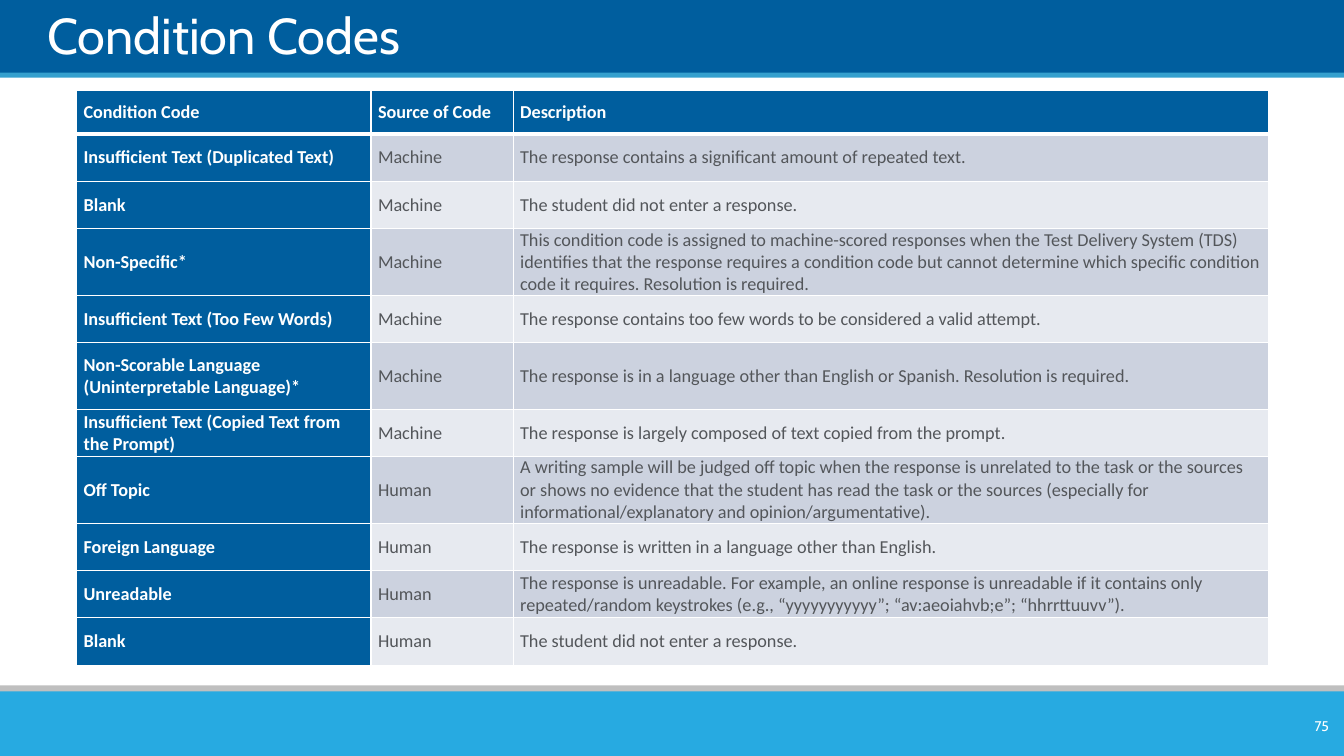
from dataclasses import dataclass

from lxml.etree import SubElement
from pptx import Presentation
from pptx.dml.color import RGBColor
from pptx.enum.shapes import MSO_SHAPE
from pptx.enum.text import MSO_ANCHOR, MSO_AUTO_SIZE, PP_ALIGN
from pptx.oxml import parse_xml
from pptx.oxml.ns import nsdecls, qn
from pptx.util import Inches, Pt


@dataclass(frozen=True)
class Theme:
    navy: str = "005E9E"
    blue: str = "35A0CE"
    sky: str = "27AAE1"
    gray: str = "BFBFBF"
    white: str = "FFFFFF"
    ink: str = "53565A"
    row_dark: str = "CCD2DF"
    row_light: str = "E7EAF0"
    heading_font: str = "Cabin"
    body_font: str = "Calibri"
    title_size: int = 36
    table_size: int = 13
    number_size: int = 10


THEME = Theme()
SLIDE_WIDTH = 13.33

BANDS = [
    (-0.01, 0.75, THEME.navy),
    (0.72, 0.05, THEME.blue),
    (6.8, 0.14, THEME.gray),
    (6.86, 0.64, THEME.sky),
]

COLUMN_WIDTHS = [2.92, 1.41, 7.49]
HEADER_HEIGHT, ROW_HEIGHT, TALL_HEIGHT = 0.43, 0.47, 0.66
TALL_ROWS = {3, 5, 7}

HEADER = ("Condition Code", "Source of Code", "Description")
CONDITIONS = [
    ("Insufficient Text (Duplicated Text)", "Machine",
     "The response contains a significant amount of repeated text."),
    ("Blank", "Machine", "The student did not enter a response."),
    ("Non-Specific*", "Machine",
     "This condition code is assigned to machine-scored responses when the Test "
     "Delivery System (TDS) identifies that the response requires a condition code "
     "but cannot determine which specific condition code it requires. "
     "Resolution is required."),
    ("Insufficient Text (Too Few Words)", "Machine",
     "The response contains too few words to be considered a valid attempt."),
    ("Non-Scorable Language (Uninterpretable Language)*", "Machine",
     "The response is in a language other than English or Spanish. "
     "Resolution is required."),
    ("Insufficient Text (Copied Text from the Prompt)", "Machine",
     "The response is largely composed of text copied from the prompt."),
    ("Off Topic", "Human",
     "A writing sample will be judged off topic when the response is unrelated to "
     "the task or the sources or shows no evidence that the student has read the "
     "task or the sources (especially for informational/explanatory and "
     "opinion/argumentative)."),
    ("Foreign Language", "Human",
     "The response is written in a language other than English."),
    ("Unreadable", "Human",
     "The response is unreadable. For example, an online response is unreadable if "
     "it contains only repeated/random keystrokes (e.g., “yyyyyyyyyyy”; "
     "“av:aeoiahvb;e”; “hhrrttuuvv”)."),
    ("Blank", "Human", "The student did not enter a response."),
]


def style_text(tf, font, size, color, bold=False, align=PP_ALIGN.LEFT):
    for p in tf.paragraphs:
        p.alignment = align
        for r in p.runs:
            r.font.name = font
            r.font.size = Pt(size)
            r.font.bold = bold
            r.font.color.rgb = RGBColor.from_string(color)


def add_band(s, top, height, color):
    """Add a full-width stripe."""
    sp = s.shapes.add_shape(MSO_SHAPE.RECTANGLE, 0, Inches(top),
                            Inches(SLIDE_WIDTH), Inches(height))
    sp.shadow.inherit = False
    sp.fill.solid()
    sp.fill.fore_color.rgb = RGBColor.from_string(color)
    sp.line.fill.background()
    return sp


def set_title(s, text):
    sp = s.shapes.title
    sp.left, sp.top = Inches(0.47), Inches(0.07)
    sp.width, sp.height = Inches(12.43), Inches(0.57)
    tf = sp.text_frame
    tf.text = text
    tf.word_wrap = True
    tf.auto_size = MSO_AUTO_SIZE.NONE
    tf.vertical_anchor = MSO_ANCHOR.BOTTOM
    tf.margin_left = tf.margin_top = tf.margin_right = tf.margin_bottom = 0
    style_text(tf, THEME.heading_font, THEME.title_size, THEME.white)


def set_borders(cell, top, bottom):
    """Draw white cell borders; top and bottom are widths in points."""
    tc_pr = cell._tc.get_or_add_tcPr()
    for i, (side, width) in enumerate(zip("LRTB", (1, 1, top, bottom))):
        ln = parse_xml(f'<a:ln{side} {nsdecls("a")} w="{Pt(width)}"/>')
        fill = SubElement(ln, qn("a:solidFill"))
        SubElement(fill, qn("a:srgbClr"), val=THEME.white)
        tc_pr.insert(i, ln)


def fill_cell(cell, text, row, col):
    strong = row == 0 or col == 0
    band = THEME.row_dark if row % 2 else THEME.row_light
    cell.fill.solid()
    cell.fill.fore_color.rgb = RGBColor.from_string(THEME.navy if strong else band)
    cell.vertical_anchor = MSO_ANCHOR.MIDDLE
    cell.margin_left = cell.margin_right = Inches(0.07)
    cell.margin_top = cell.margin_bottom = 0
    cell.text_frame.text = text
    style_text(cell.text_frame, THEME.body_font, THEME.table_size,
               THEME.white if strong else THEME.ink, bold=strong)
    set_borders(cell, top=3 if row == 1 else 1, bottom=3 if row == 0 else 1)


def add_condition_table(s):
    rows = [HEADER, *CONDITIONS]
    heights = [HEADER_HEIGHT] + [TALL_HEIGHT if i in TALL_ROWS else ROW_HEIGHT
                                 for i in range(1, len(rows))]
    table = s.shapes.add_table(
        len(rows), len(COLUMN_WIDTHS), Inches(0.76), Inches(0.9),
        Inches(sum(COLUMN_WIDTHS)), Inches(sum(heights))).table
    for column, width in zip(table.columns, COLUMN_WIDTHS):
        column.width = Inches(width)
    for i, (values, height) in enumerate(zip(rows, heights)):
        table.rows[i].height = Inches(height)
        for j, text in enumerate(values):
            fill_cell(table.cell(i, j), text, i, j)


def add_page_number(s, number):
    sp = s.shapes.add_textbox(Inches(12.51), Inches(7.05), Inches(0.77), Inches(0.3))
    tf = sp.text_frame
    tf.text = str(number)
    tf.word_wrap = True
    tf.vertical_anchor = MSO_ANCHOR.MIDDLE
    style_text(tf, THEME.heading_font, THEME.number_size, THEME.white,
               align=PP_ALIGN.RIGHT)


def main():
    prs = Presentation()
    prs.slide_width, prs.slide_height = Inches(SLIDE_WIDTH), Inches(7.5)
    s = prs.slides.add_slide(prs.slide_layouts[5])
    bands = [add_band(s, *band) for band in BANDS]
    set_title(s, "Condition Codes")
    bands[-1].element.addnext(s.shapes.title.element)  # title in front of the bands
    add_condition_table(s)
    add_page_number(s, 75)
    prs.save("out.pptx")


if __name__ == "__main__":
    main()
